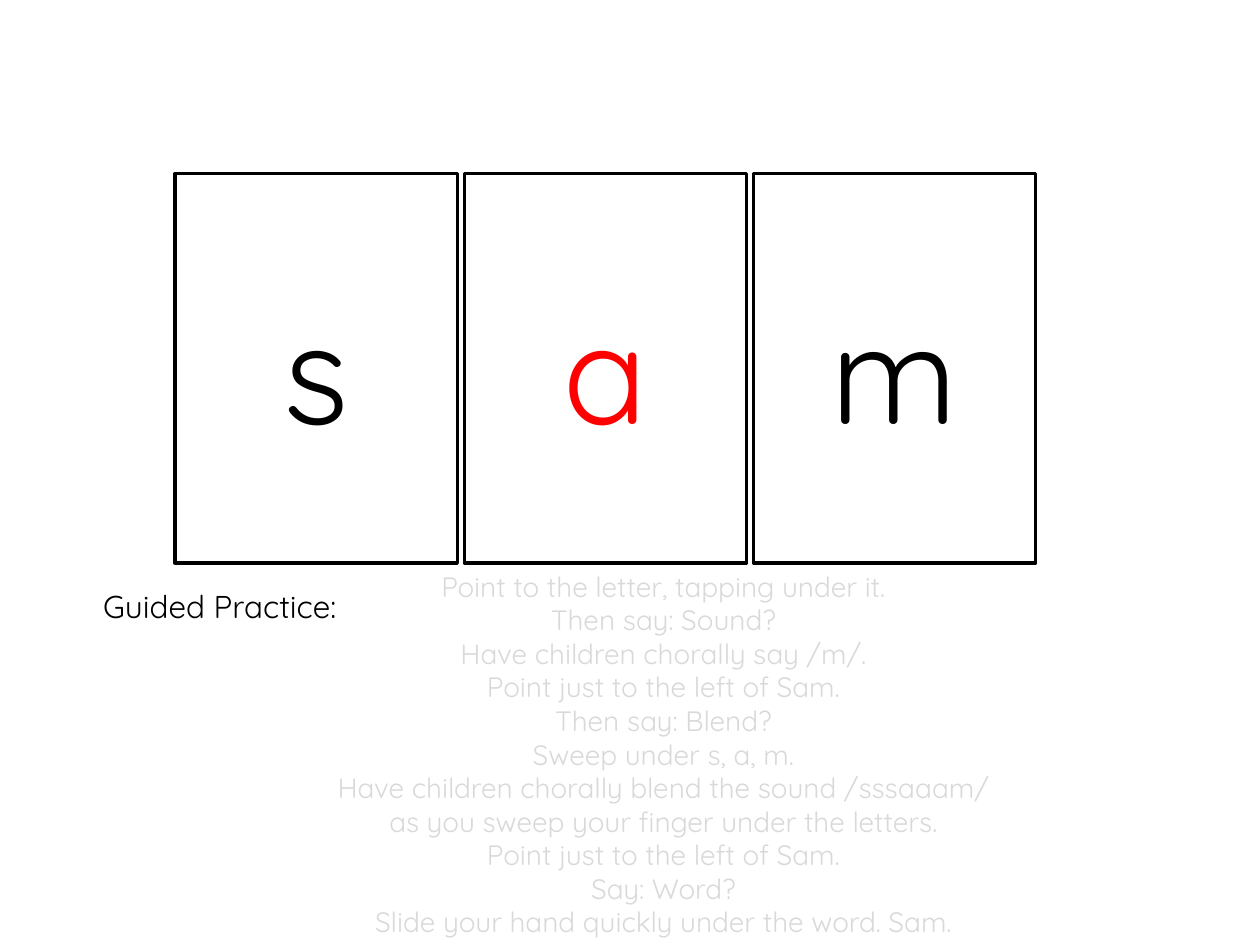
from dataclasses import dataclass

from pptx import Presentation
from pptx.dml.color import RGBColor
from pptx.enum.shapes import MSO_SHAPE
from pptx.enum.text import MSO_ANCHOR, MSO_AUTO_SIZE, PP_ALIGN
from pptx.util import Cm, Pt

RECT = MSO_SHAPE.RECTANGLE
MIDDLE = MSO_ANCHOR.MIDDLE
GROW = MSO_AUTO_SIZE.SHAPE_TO_FIT_TEXT
LEFT, CENTER = PP_ALIGN.LEFT, PP_ALIGN.CENTER


@dataclass(frozen=True)
class Theme:
    font: str = "Quicksand"
    ink: str = "000000"
    vowel: str = "FF0000"
    faint: str = "D9D9D9"
    paper: str = "FFFFFF"
    letter: int = 80
    label: int = 18
    script: int = 16
    border: int = 2


def write(frame, text, *, font, size, color, align=LEFT):
    """Fill a text frame, one paragraph for each line."""
    frame.word_wrap = True
    frame.text = text
    for para in frame.paragraphs:
        para.alignment = align
        for run in para.runs:
            run.font.name = font
            run.font.size = Pt(size)
            run.font.color.rgb = RGBColor.from_string(color)


class Board:
    def __init__(self, slide, theme):
        self.slide = slide
        self.theme = theme

    def card(self, letter, box, color):
        shape = self.slide.shapes.add_shape(RECT, *map(Cm, box))
        shape.shadow.inherit = False
        shape.fill.solid()
        shape.fill.fore_color.rgb = RGBColor.from_string(self.theme.paper)
        shape.line.color.rgb = RGBColor.from_string(self.theme.ink)
        shape.line.width = Pt(self.theme.border)
        shape.text_frame.vertical_anchor = MIDDLE
        write(shape.text_frame, letter, font=self.theme.font,
              size=self.theme.letter, color=color, align=CENTER)

    def note(self, text, box, **style):
        frame = self.slide.shapes.add_textbox(*map(Cm, box)).text_frame
        write(frame, text, font=self.theme.font, **style)
        frame.auto_size = GROW


STEPS = [
    "Point to the letter, tapping under it.",
    "Then say: Sound?",
    "Have children chorally say /m/.",
    "Point just to the left of Sam.",
    "Then say: Blend?",
    "Sweep under s, a, m.",
    "Have children chorally blend the sound /sssaaam/",
    "as you sweep your finger under the letters.",
    "Point just to the left of Sam.",
    "Say: Word?",
    "Slide your hand quickly under the word. Sam.",
]


def main():
    deck = Presentation()
    deck.slide_width, deck.slide_height = Cm(25.4), Cm(19.05)
    theme = Theme()
    board = Board(deck.slides.add_slide(deck.slide_layouts[6]), theme)

    # Teacher's script
    board.note("\n".join(STEPS), (1.35, 11.35, 24.05, 7.77),
               size=theme.script, color=theme.faint, align=CENTER)

    # Letter cards, with the vowel in red
    left, top, width, height, pitch = 3.53, 3.5, 5.69, 7.85, 5.83
    for i, letter in enumerate("sam"):
        color = theme.vowel if letter in "aeiou" else theme.ink
        board.card(letter, (left + i * pitch, top, width, height), color)

    # Section label
    board.note("Guided Practice:", (1.83, 11.71, 5.99, 1.02),
               size=theme.label, color=theme.ink)

    deck.save("out.pptx")


if __name__ == "__main__":
    main()
